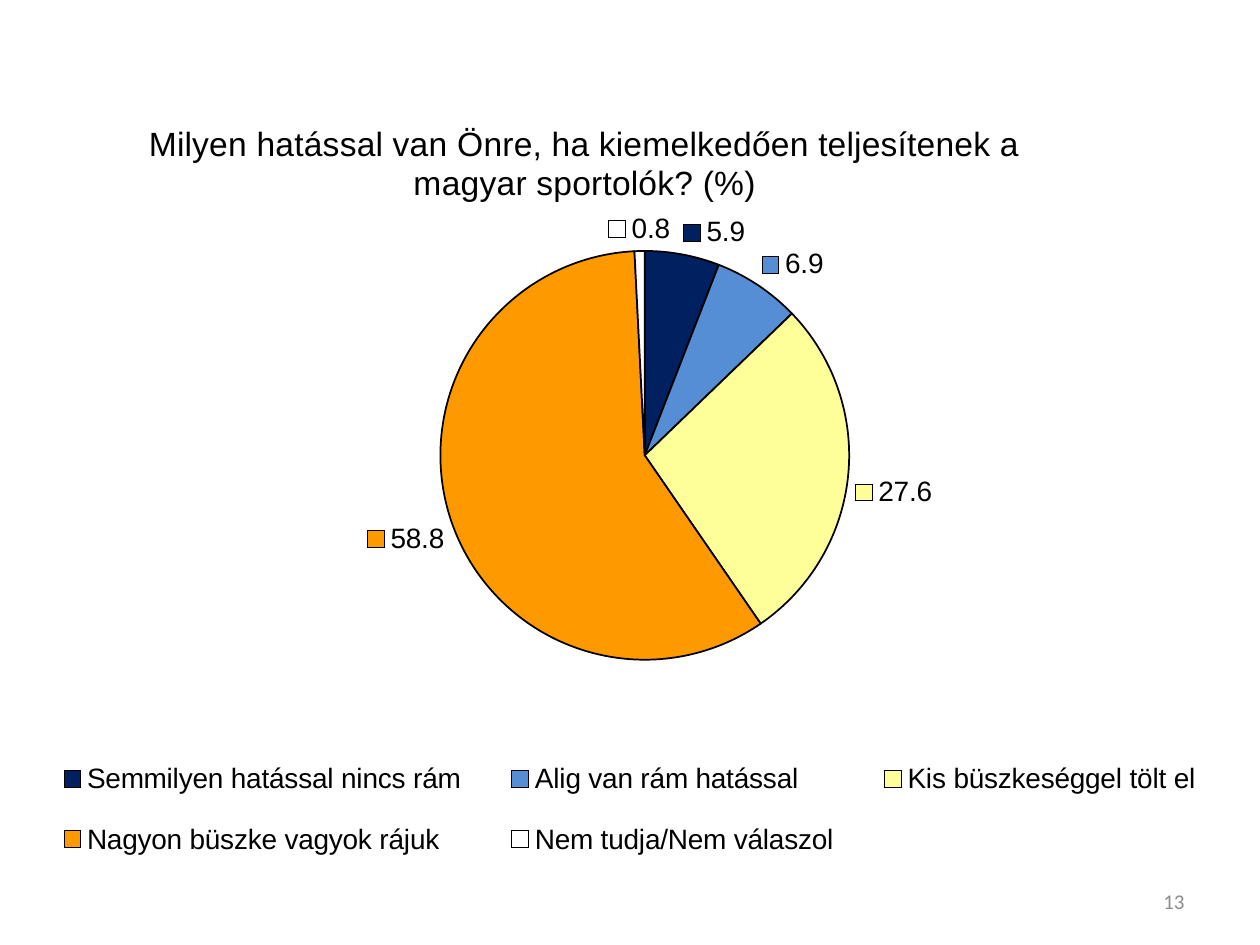
"""Build a slide with a pie chart on pride in Hungarian athletes."""
from dataclasses import dataclass

from lxml import etree
from pptx import Presentation
from pptx.chart.data import CategoryChartData
from pptx.dml.color import RGBColor
from pptx.enum.chart import XL_CHART_TYPE, XL_LABEL_POSITION, XL_LEGEND_POSITION
from pptx.enum.text import MSO_ANCHOR, PP_ALIGN
from pptx.oxml.ns import qn
from pptx.util import Inches, Pt

PIE = XL_CHART_TYPE.PIE
OUTSIDE = XL_LABEL_POSITION.OUTSIDE_END
BOTTOM = XL_LEGEND_POSITION.BOTTOM
MIDDLE = MSO_ANCHOR.MIDDLE
RIGHT = PP_ALIGN.RIGHT
SLIDE_W, SLIDE_H = Inches(10), Inches(7.5)
QUESTION = "Milyen hatással van Önre, ha kiemelkedően teljesítenek a magyar sportolók? (%)"


@dataclass(frozen=True)
class Theme:
    """Colours, fonts and type sizes of the slide."""
    ink: str = "000000"
    muted: str = "8C8C8C"
    chart_font: str = "Arial"
    number_font: str = "Calibri"
    title_size: float = 19.2
    chart_size: int = 16
    number_size: int = 12
    outline: int = 1


@dataclass(frozen=True)
class Box:
    """A frame given as shares of its container."""
    x: float
    y: float
    w: float
    h: float

    def on_slide(self) -> tuple[int, int, int, int]:
        """Return the frame in slide units."""
        return (int(self.x * SLIDE_W), int(self.y * SLIDE_H),
                int(self.w * SLIDE_W), int(self.h * SLIDE_H))


@dataclass(frozen=True)
class Answer:
    """One answer with its percentage and slice colour."""
    text: str
    share: float
    color: str


THEME = Theme()
CHART_BOX = Box(0.08 / 10, 0.4 / 7.5, 9.84 / 10, 6.69 / 7.5)
NUMBER_BOX = Box(7.17 / 10, 6.95 / 7.5, 2.33 / 10, 0.4 / 7.5)
TITLE_PLACE = {"x": 0.107, "y": 0.076}
PIE_PLACE = {"x": 0.09, "y": 0.238, "w": 0.844, "h": 0.485}
LEGEND_PLACE = {"x": 0.01, "y": 0.81, "w": 0.98, "h": 0.18}
ANSWERS = (
    Answer("Semmilyen hatással nincs rám", 5.9, "002060"),
    Answer("Alig van rám hatással", 6.9, "558ED5"),
    Answer("Kis büszkeséggel tölt el", 27.6, "FFFF99"),
    Answer("Nagyon büszke vagyok rájuk", 58.8, "FF9900"),
    Answer("Nem tudja/Nem válaszol", 0.8, "FFFFFF"),
)


def style_font(font, name: str, size: float, color: str) -> None:
    """Set the face, size and colour of a font."""
    font.name, font.size, font.bold = name, Pt(size), False
    font.color.rgb = RGBColor.from_string(color)


def place(part, before: tuple[str, ...], shares: dict[str, float], inner: bool = False) -> None:
    """Give a chart part a manual layout, after the named children."""
    for old in part.findall(qn("c:layout")):
        part.remove(old)
    layout = etree.Element(qn("c:layout"))
    manual = etree.SubElement(layout, qn("c:manualLayout"))
    if inner:
        etree.SubElement(manual, qn("c:layoutTarget")).set("val", "inner")
    for axis in ("x", "y"):
        etree.SubElement(manual, qn(f"c:{axis}Mode")).set("val", "edge")
    for key, share in shares.items():
        etree.SubElement(manual, qn(f"c:{key}")).set("val", str(share))
    leading = [child for child in part if child.tag in map(qn, before)]
    part.insert(len(leading), layout)


def add_title(chart) -> None:
    """Write the survey question above the pie."""
    chart.has_title = True
    title = chart.chart_title
    run = title.text_frame.paragraphs[0].add_run()
    run.text = QUESTION
    style_font(run.font, THEME.chart_font, THEME.title_size, THEME.ink)
    title.include_in_layout = False
    place(title._element, ("c:tx",), TITLE_PLACE)


def add_legend(chart) -> None:
    """List the answers below the pie."""
    chart.has_legend = True
    legend = chart.legend
    legend.position = BOTTOM
    legend.include_in_layout = False
    style_font(legend.font, THEME.chart_font, THEME.chart_size, THEME.ink)
    place(legend._element, ("c:legendPos", "c:legendEntry"), LEGEND_PLACE)


def style_slices(plot) -> None:
    """Colour, outline and label the slices."""
    plot.vary_by_categories = True
    for index, answer in enumerate(ANSWERS):
        slice_format = plot.series[0].points[index].format
        slice_format.fill.solid()
        slice_format.fill.fore_color.rgb = RGBColor.from_string(answer.color)
        slice_format.line.color.rgb = RGBColor.from_string(THEME.ink)
        slice_format.line.width = Pt(THEME.outline)
    labels = plot.series[0].data_labels
    labels.show_value = True
    labels.show_legend_key = True
    labels.position = OUTSIDE
    labels.number_format = "###0.0"
    labels.number_format_is_linked = False
    style_font(labels.font, THEME.chart_font, THEME.chart_size, THEME.ink)


def add_answer_pie(slide) -> None:
    """Add the pie chart of all answers."""
    data = CategoryChartData(number_format="###0.0")
    data.categories = [answer.text for answer in ANSWERS]
    data.add_series("Series 1", [answer.share for answer in ANSWERS])
    chart = slide.shapes.add_chart(PIE, *CHART_BOX.on_slide(), data).chart
    style_font(chart.font, THEME.chart_font, THEME.chart_size, THEME.ink)
    add_title(chart)
    add_legend(chart)
    style_slices(chart.plots[0])
    place(chart._chartSpace.chart.plotArea, (), PIE_PLACE, inner=True)


def add_page_number(slide, number: str) -> None:
    """Write the page number in the lower right corner."""
    frame = slide.shapes.add_textbox(*NUMBER_BOX.on_slide()).text_frame
    frame.word_wrap = True
    frame.vertical_anchor = MIDDLE
    paragraph = frame.paragraphs[0]
    paragraph.alignment = RIGHT
    run = paragraph.add_run()
    run.text = number
    style_font(run.font, THEME.number_font, THEME.number_size, THEME.muted)


def main() -> None:
    """Build and save the presentation."""
    deck = Presentation()
    deck.slide_width, deck.slide_height = SLIDE_W, SLIDE_H
    slide = deck.slides.add_slide(deck.slide_layouts[6])
    add_page_number(slide, "13")
    add_answer_pie(slide)
    deck.save("out.pptx")


if __name__ == "__main__":
    main()
